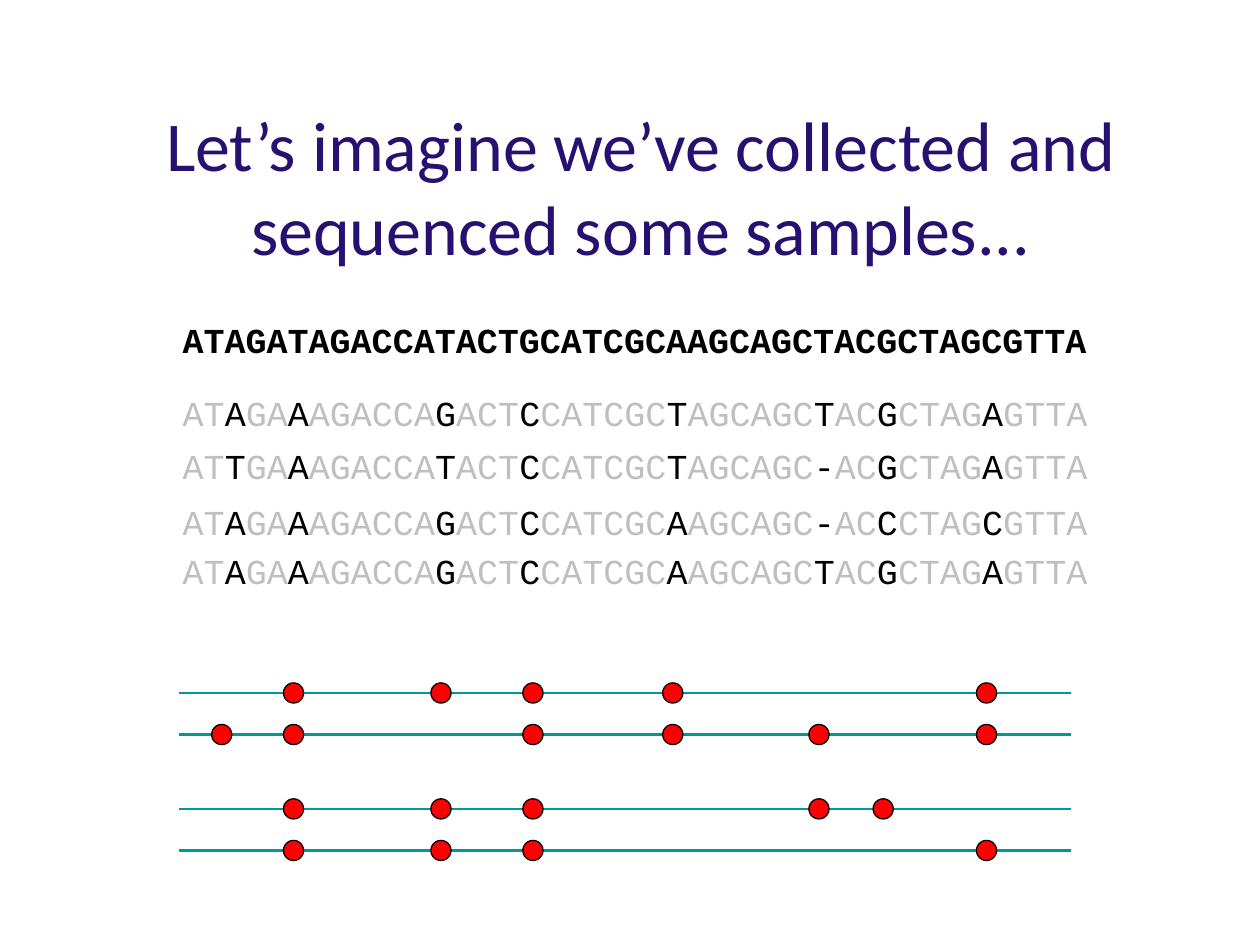
from itertools import groupby

from lxml.etree import SubElement
from pptx import Presentation
from pptx.dml.color import RGBColor
from pptx.enum.shapes import MSO_CONNECTOR, MSO_SHAPE
from pptx.enum.text import MSO_ANCHOR, PP_ALIGN
from pptx.oxml.ns import qn
from pptx.util import Inches, Pt

COLORS = {
    "title": "261170",
    "shared": "BFBFBF",
    "variable": "000000",
    "strand": "009999",
    "mutation": "FF0000",
    "outline": "000000",
}
TITLE = "Let’s imagine we’ve collected and sequenced some samples..."
REFERENCE = "ATAGATAGACCATACTGCATCGCAAGCAGCTACGCTAGCGTTA"
REFERENCE_TOP = 2.48
SAMPLES = [
    ("ATAGAAAGACCAGACTCCATCGCTAGCAGCTACGCTAGAGTTA", 3.06, 5.5),
    ("ATTGAAAGACCATACTCCATCGCTAGCAGC-ACGCTAGAGTTA", 3.48, 5.83),
    ("ATAGAAAGACCAGACTCCATCGCAAGCAGC-ACCCTAGCGTTA", 3.92, 6.42),
    ("ATAGAAAGACCAGACTCCATCGCAAGCAGCTACGCTAGAGTTA", 4.31, 6.75),
]
SITE_LEFTS = {2: 1.68, 5: 2.25, 12: 3.42, 16: 4.15, 23: 5.26, 30: 6.42, 33: 6.93, 38: 7.75}
STRAND_LEFT, STRAND_RIGHT = 1.42, 8.5
DOT_SIZE = 0.16


def color(name):
    """Return a named colour."""
    return RGBColor.from_string(COLORS[name])


def add_title(page):
    """Place and format the title."""
    title = page.shapes.title
    title.left, title.top = Inches(0.5), Inches(0.75)
    title.width, title.height = Inches(9.17), Inches(1.45)
    frame = title.text_frame
    frame.text = TITLE
    frame.vertical_anchor = MSO_ANCHOR.MIDDLE
    para = frame.paragraphs[0]
    para.alignment = PP_ALIGN.CENTER
    para.font.name, para.font.size = "Calibri", Pt(40)
    para.font.color.rgb = color("title")


def add_sequence(page, top):
    """Add an empty centred sequence line and return its paragraph."""
    box = page.shapes.add_textbox(Inches(0.75), Inches(top), Inches(8.58), Inches(0.44))
    box.text_frame.word_wrap = True
    para = box.text_frame.paragraphs[0]
    para.alignment = PP_ALIGN.CENTER
    para.font.name, para.font.size = "Courier New", Pt(20)
    return para


def add_reference(page):
    """Add the bold reference sequence."""
    para = add_sequence(page, REFERENCE_TOP)
    para.add_run().text = REFERENCE
    para.font.bold = True
    para.font.color.rgb = color("variable")


def add_sample(page, sequence, top):
    """Add a sample sequence with its variable sites in black."""
    para = add_sequence(page, top)
    for variable, sites in groupby(range(len(sequence)), lambda site: site in SITE_LEFTS):
        span = para.add_run()
        span.text = "".join(sequence[site] for site in sites)
        span.font.color.rgb = color("variable" if variable else "shared")


def add_strand(group, middle):
    """Add the line that stands for one sample."""
    strand = group.shapes.add_connector(
        MSO_CONNECTOR.STRAIGHT,
        Inches(STRAND_LEFT), Inches(middle), Inches(STRAND_RIGHT), Inches(middle),
    )
    strand.line.color.rgb = color("strand")
    strand.line.width = Pt(1.5)
    SubElement(strand._element.spPr, qn("a:effectLst"))


def add_mutation(group, left, middle):
    """Add a dot for one difference from the reference."""
    dot = group.shapes.add_shape(
        MSO_SHAPE.OVAL,
        Inches(left), Inches(middle - DOT_SIZE / 2), Inches(DOT_SIZE), Inches(DOT_SIZE),
    )
    dot.shadow.inherit = False
    dot.fill.solid()
    dot.fill.fore_color.rgb = color("mutation")
    dot.line.color.rgb = color("outline")
    dot.line.width = Pt(0.75)


def main():
    """Build and save the slide."""
    deck = Presentation()
    deck.slide_width, deck.slide_height = Inches(10), Inches(7.5)
    page = deck.slides.add_slide(deck.slide_layouts[5])
    add_title(page)
    add_reference(page)
    for sequence, top, _ in SAMPLES:
        add_sample(page, sequence, top)
    group = page.shapes.add_group_shape()
    for sequence, _, middle in SAMPLES:
        add_strand(group, middle)
        for site, left in SITE_LEFTS.items():
            if sequence[site] != REFERENCE[site]:
                add_mutation(group, left, middle)
    deck.save("out.pptx")


if __name__ == "__main__":
    main()
